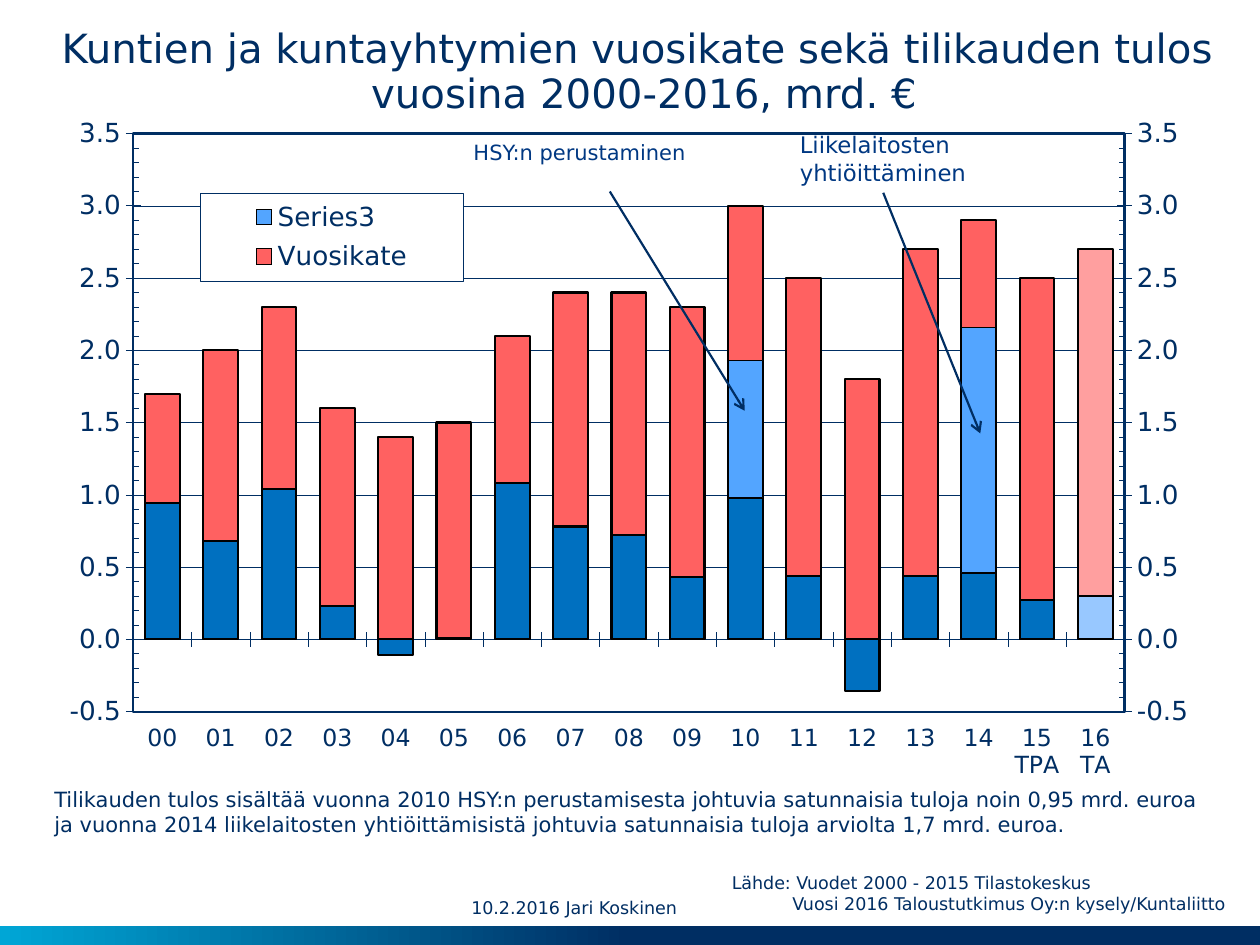
from copy import deepcopy

from lxml import etree
from pptx import Presentation
from pptx.chart.data import CategoryChartData
from pptx.dml.color import RGBColor
from pptx.enum.chart import XL_CHART_TYPE, XL_LEGEND_POSITION, XL_TICK_LABEL_POSITION, XL_TICK_MARK
from pptx.enum.dml import MSO_LINE
from pptx.enum.shapes import MSO_CONNECTOR, MSO_SHAPE
from pptx.enum.text import MSO_ANCHOR, PP_ALIGN
from pptx.oxml import parse_xml
from pptx.oxml.ns import nsdecls, qn
from pptx.util import Inches, Pt

CLUSTERED = XL_CHART_TYPE.COLUMN_CLUSTERED
LEGEND_RIGHT = XL_LEGEND_POSITION.RIGHT
LABELS_LOW = XL_TICK_LABEL_POSITION.LOW
CROSS, INSIDE = XL_TICK_MARK.CROSS, XL_TICK_MARK.INSIDE
DOTTED = MSO_LINE.ROUND_DOT
STRAIGHT = MSO_CONNECTOR.STRAIGHT
RECTANGLE = MSO_SHAPE.RECTANGLE
CENTER = PP_ALIGN.CENTER
TOP, MIDDLE = MSO_ANCHOR.TOP, MSO_ANCHOR.MIDDLE

NAVY, CYAN, LABEL_BLUE = "002E63", "00A6D6", "003882"
FONT = "DejaVu Sans"

YEARS = [f"{year:02}" for year in range(15)] + ["15 TPA", "16 TA"]
MARGIN = [1.7, 2, 2.3, 1.6, 1.4, 1.5, 2.1, 2.4, 2.4, 2.3, 3, 2.5, 1.8, 2.7, 2.9, 2.5, 2.7]
RESULT = [0.94, 0.68, 1.04, 0.23, -0.11, 0.01, 1.08, 0.78, 0.72, 0.43, 0.98, 0.44, -0.36,
          0.44, 0.46, 0.27, 0.3]
EXTRAORDINARY = [{10: 0.95, 14: 1.7}.get(index) for index in range(len(YEARS))]
SERIES = [
    ("Vuosikate", MARGIN, "FF6161", "FF9F9F", 1.25),
    ("Series 2", RESULT, "0070C0", "98C8FF", 1.25),
    ("Series3", EXTRAORDINARY, "53A5FF", None, 0.75),
]


def rgb(value):
    return RGBColor.from_string(value)


def outline(line, color, width):
    line.color.rgb = rgb(color)
    line.width = Pt(width)


def manual_layout(left, top, width, height, inner=False):
    target = '<c:layoutTarget val="inner"/>' if inner else ""
    return parse_xml(
        f'<c:layout {nsdecls("c")}><c:manualLayout>{target}'
        '<c:xMode val="edge"/><c:yMode val="edge"/>'
        f'<c:x val="{left}"/><c:y val="{top}"/><c:w val="{width}"/><c:h val="{height}"/>'
        "</c:manualLayout></c:layout>")


def frame(fill, width):
    return parse_xml(
        f'<c:spPr {nsdecls("c", "a")}>{fill}<a:ln w="{Pt(width)}">'
        f'<a:solidFill><a:srgbClr val="{NAVY}"/></a:solidFill></a:ln></c:spPr>')


class SlideBuilder:
    def __init__(self, slide):
        self.slide = slide
        self.shapes = slide.shapes

    def gradient_bar(self, left, top, width, height):
        shape = self.shapes.add_shape(
            RECTANGLE, Inches(left), Inches(top), Inches(width), Inches(height))
        shape.shadow.inherit = False
        shape.line.fill.background()
        shape.fill.gradient()
        shape.fill.gradient_angle = 180
        for stop, position, color in zip(shape.fill.gradient_stops, (0.5, 1), (NAVY, CYAN)):
            stop.position = position
            stop.color.rgb = rgb(color)

    def text(self, left, top, width, height, lines, size, color=NAVY, align=None,
             spacing=None, inset=True, wrap=True, anchor=TOP, last_indent=0):
        box = self.shapes.add_textbox(Inches(left), Inches(top), Inches(width), Inches(height))
        text_frame = box.text_frame
        text_frame.word_wrap = wrap
        text_frame.vertical_anchor = anchor
        if not inset:
            text_frame.margin_left = text_frame.margin_right = 0
            text_frame.margin_top = text_frame.margin_bottom = 0
        text_frame.text = "\n".join(lines)
        for paragraph in text_frame.paragraphs:
            paragraph.alignment = align
            paragraph.line_spacing = spacing
            paragraph.font.name = FONT
            paragraph.font.size = Pt(size)
            paragraph.font.color.rgb = rgb(color)
        if last_indent:
            properties = text_frame.paragraphs[-1]._p.get_or_add_pPr()
            properties.set("marL", str(Inches(last_indent)))

    def arrow(self, start, end):
        connector = self.shapes.add_connector(STRAIGHT, *map(Inches, start + end))
        outline(connector.line, NAVY, 1.25)
        etree.SubElement(connector.line._get_or_add_ln(), qn("a:tailEnd"), type="arrow")
        etree.SubElement(connector._element.spPr, qn("a:effectLst"))

    def style_axis(self, axis, size):
        axis.major_tick_mark = CROSS
        axis.tick_labels.font.name = FONT
        axis.tick_labels.font.size = Pt(size)
        axis.tick_labels.font.bold = False
        axis.tick_labels.font.color.rgb = rgb(NAVY)
        outline(axis.format.line, NAVY, 0.3)

    def add_second_axis(self, chart):
        plot_area = chart._chartSpace.chart.plotArea
        left_bars = plot_area.find(qn("c:barChart"))
        right_bars = deepcopy(left_bars)
        left_bars.addnext(right_bars)
        for series in left_bars.findall(qn("c:ser"))[1:]:
            left_bars.remove(series)
        right_bars.remove(right_bars.find(qn("c:ser")))
        right_bars.find(qn("c:grouping")).set("val", "stacked")
        category_axis = deepcopy(plot_area.find(qn("c:catAx")))
        value_axis = deepcopy(plot_area.find(qn("c:valAx")))
        plot_area.find(qn("c:valAx")).addnext(value_axis)
        value_axis.addnext(category_axis)
        for element, own, other in ((category_axis, "5001", "5002"), (value_axis, "5002", "5001")):
            element.find(qn("c:axId")).set("val", own)
            element.find(qn("c:crossAx")).set("val", other)
        for reference, own in zip(right_bars.findall(qn("c:axId")), ("5001", "5002")):
            reference.set("val", own)
        category_axis.find(qn("c:delete")).set("val", "1")
        value_axis.remove(value_axis.find(qn("c:majorGridlines")))
        value_axis.find(qn("c:axPos")).set("val", "r")
        value_axis.find(qn("c:crosses")).set("val", "max")
        chart.plots[1].overlap = 100
        for layout in plot_area.findall(qn("c:layout")):
            plot_area.remove(layout)
        plot_area.insert(0, manual_layout(0.083, 0.043, 0.829, 0.856, inner=True))
        plot_area.append(frame("<a:noFill/>", 1.25))

    def add_legend(self, chart):
        chart.has_legend = True
        legend = chart.legend
        legend.position = LEGEND_RIGHT
        legend.include_in_layout = False
        legend.font.name = FONT
        legend.font.size = Pt(15)
        legend.font.bold = False
        legend.font.color.rgb = rgb(NAVY)
        element = legend._element
        for layout in element.findall(qn("c:layout")):
            element.remove(layout)
        hidden = parse_xml(f'<c:legendEntry {nsdecls("c")}><c:idx val="1"/>'
                           '<c:delete val="1"/></c:legendEntry>')
        element.find(qn("c:legendPos")).addnext(hidden)
        hidden.addnext(manual_layout(0.139, 0.131, 0.22, 0.13))
        white = '<a:solidFill><a:srgbClr val="FFFFFF"/></a:solidFill>'
        element.find(qn("c:txPr")).addprevious(frame(white, 0.3))

    def chart(self, left, top, width, height):
        data = CategoryChartData(number_format="0.00")
        data.categories = YEARS
        for name, values, *_ in SERIES:
            data.add_series(name, values)
        chart = self.shapes.add_chart(
            CLUSTERED, Inches(left), Inches(top), Inches(width), Inches(height), data).chart
        chart.has_title = False
        chart.font.name = "Times New Roman"
        chart.font.size = Pt(21.9)
        chart.font.bold = True
        chart.font.color.rgb = rgb(NAVY)
        plot = chart.plots[0]
        plot.gap_width = 68
        plot.vary_by_categories = False
        for series, (_, _, color, forecast, line_width) in zip(plot.series, SERIES):
            parts = [(series, color)]
            if forecast:
                parts.append((series.points[len(YEARS) - 1], forecast))
            for part, fill in parts:
                part.format.fill.solid()
                part.format.fill.fore_color.rgb = rgb(fill)
                outline(part.format.line, "000000", line_width)
        self.style_axis(chart.category_axis, 13.5)
        chart.category_axis.tick_label_position = LABELS_LOW
        axis = chart.value_axis
        self.style_axis(axis, 15)
        axis.minimum_scale, axis.maximum_scale = -0.5, 3.5
        axis.major_unit, axis.minor_unit = 0.5, 0.1
        axis.minor_tick_mark = INSIDE
        axis.tick_labels.number_format = "0.0"
        axis.tick_labels.number_format_is_linked = False
        outline(axis.major_gridlines.format.line, NAVY, 0.25)
        axis.major_gridlines.format.line.dash_style = DOTTED
        self.add_second_axis(chart)
        self.add_legend(chart)


def main():
    presentation = Presentation()
    presentation.slide_width, presentation.slide_height = Inches(10), Inches(7.5)
    builder = SlideBuilder(presentation.slides.add_slide(presentation.slide_layouts[6]))
    builder.gradient_bar(0, 7.35, 10, 0.15)
    builder.chart(0.27, 0.83, 9.49, 5.36)
    builder.text(0.28, 0.21, 9.57, 0.74,
                 ["Kuntien ja kuntayhtymien vuosikate sekä tilikauden tulos",
                  " vuosina 2000-2016, mrd. €"],
                 23, align=CENTER, spacing=0.95, inset=False)
    builder.text(0.28, 6.19, 9.64, 0.5,
                 [" Tilikauden tulos sisältää vuonna 2010 HSY:n perustamisesta johtuvia "
                  "satunnaisia tuloja noin 0,95 mrd. euroa",
                  " ja vuonna 2014 liikelaitosten yhtiöittämisistä johtuvia satunnaisia "
                  "tuloja arviolta 1,7 mrd. euroa."], 12)
    builder.text(3.74, 7.06, 1.78, 0.29, ["10.2.2016 Jari Koskinen"], 10,
                 inset=False, anchor=MIDDLE)
    builder.text(6.25, 0.99, 1.53, 0.54, ["Liikelaitosten", "yhtiöittäminen"], 13,
                 LABEL_BLUE, wrap=False)
    builder.text(3.66, 1.06, 1.94, 0.3, ["HSY:n perustaminen"], 12, LABEL_BLUE, wrap=False)
    builder.arrow((4.84, 1.52), (5.91, 3.26))
    builder.arrow((7.01, 1.53), (7.78, 3.44))
    builder.text(5.71, 6.87, 4.33, 0.44,
                 ["Lähde: Vuodet 2000 - 2015 Tilastokeskus",
                  "Vuosi 2016 Taloustutkimus Oy:n kysely/Kuntaliitto"], 10, last_indent=0.48)
    presentation.save("out.pptx")


if __name__ == "__main__":
    main()
